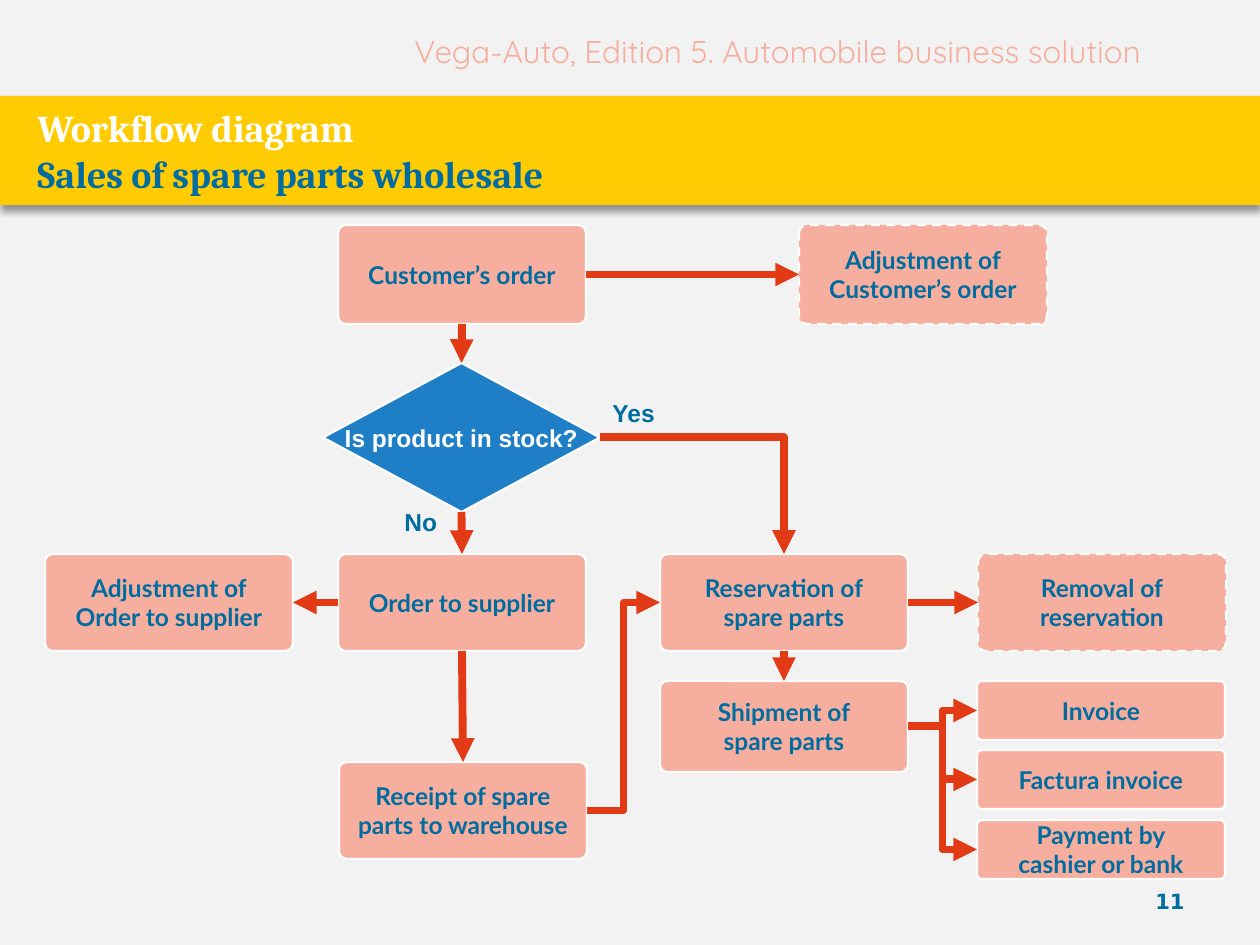
from lxml import etree
from pptx import Presentation
from pptx.dml.color import RGBColor
from pptx.enum.dml import MSO_LINE
from pptx.enum.shapes import MSO_CONNECTOR, MSO_SHAPE
from pptx.enum.text import MSO_ANCHOR, PP_ALIGN
from pptx.oxml import parse_xml
from pptx.oxml.ns import nsdecls, qn
from pptx.util import Pt

PX = 9144000 / 1260
COLORS = {
    "background": "F2F2F2", "band": "FFCC03", "box": "F6AF9F", "decision": "1E7FC6",
    "arrow": "E23A15", "text": "006CA0", "white": "FFFFFF",
}


def emu(*lengths):
    return [round(length * PX) for length in lengths]


def write_text(shape, text, size=14, font="Lato", color="text", bold=True,
               align=PP_ALIGN.LEFT, anchor=MSO_ANCHOR.TOP, wrap=True):
    """Append each line of text as a paragraph."""
    frame = shape.text_frame
    frame.word_wrap = wrap
    frame.vertical_anchor = anchor
    for line in text.split("\n"):
        paragraph = frame.add_paragraph() if frame.text else frame.paragraphs[0]
        paragraph.alignment = align
        run = paragraph.add_run()
        run.text = line
        run.font.size = Pt(size)
        run.font.name = font
        run.font.bold = bold
        run.font.color.rgb = RGBColor.from_string(COLORS[color])


presentation = Presentation()
presentation.slide_width, presentation.slide_height = emu(1260, 945)
slide = presentation.slides.add_slide(presentation.slide_layouts[6])
slide.background.fill.solid()
slide.background.fill.fore_color.rgb = RGBColor.from_string(COLORS["background"])
shapes = slide.shapes

# Title band with its soft shadow
band = shapes.add_shape(MSO_SHAPE.RECTANGLE, *emu(0, 96, 1260, 109))
band.fill.solid()
band.fill.fore_color.rgb = RGBColor.from_string(COLORS["band"])
band.line.fill.background()
band._element.spPr.append(parse_xml(
    f'<a:effectLst {nsdecls("a")}><a:outerShdw blurRad="50800" dist="38100" dir="5400000">'
    '<a:srgbClr val="000000"><a:alpha val="40000"/></a:srgbClr></a:outerShdw></a:effectLst>'))

# Header, title and page number
header = shapes.add_textbox(*emu(402, 26, 820, 51))
write_text(header, "Vega-Auto, Edition 5. Automobile business solution",
           size=18, font="Quicksand", color="box", bold=False)
title = shapes.add_textbox(*emu(25, 97, 1134, 107))
for line, color in (("Workflow diagram", "white"), ("Sales of spare parts wholesale", "text")):
    write_text(title, line, size=21.6, font="Cambria", color=color, anchor=MSO_ANCHOR.MIDDLE)
page_number = shapes.add_textbox(*emu(903, 876, 294, 50))
write_text(page_number, "11", size=12, font="DejaVu Sans",
           align=PP_ALIGN.RIGHT, anchor=MSO_ANCHOR.MIDDLE)

# Steps: name, text, left, top, height, dashed outline
BOX_WIDTH = 248
STEPS = [
    ("order", "Customer’s order", 338, 225, 99, False),
    ("order change", "Adjustment of\nCustomer’s order", 799, 225, 99, True),
    ("supplier change", "Adjustment of\nOrder to supplier", 45, 554, 97, False),
    ("supplier", "Order to supplier", 338, 554, 97, False),
    ("reservation", "Reservation of\nspare parts", 660, 554, 97, False),
    ("removal", "Removal of\nreservation", 978, 554, 97, True),
    ("receipt", "Receipt of spare\nparts to warehouse", 339, 762, 97, False),
    ("shipment", "Shipment of\nspare parts", 660, 681, 91, False),
    ("invoice", "Invoice", 977, 681, 59, False),
    ("factura", "Factura invoice", 977, 750, 59, False),
    ("payment", "Payment by\ncashier or bank", 977, 820, 59, False),
]
nodes = {}
for name, text, left, top, height, dashed in STEPS:
    box = shapes.add_shape(MSO_SHAPE.ROUNDED_RECTANGLE, *emu(left, top, BOX_WIDTH, height))
    box.adjustments[0] = 0.08
    box.fill.solid()
    box.fill.fore_color.rgb = RGBColor.from_string(COLORS["box"])
    if dashed:
        box.line.dash_style = MSO_LINE.DASH
    write_text(box, text, align=PP_ALIGN.CENTER, anchor=MSO_ANCHOR.MIDDLE, wrap=False)
    nodes[name] = box

# Decision
decision = shapes.add_shape(MSO_SHAPE.FLOWCHART_DECISION, *emu(323, 363, 277, 149))
decision.fill.solid()
decision.fill.fore_color.rgb = RGBColor.from_string(COLORS["decision"])
write_text(decision, "Is product in stock?", font="Arial", color="white",
           align=PP_ALIGN.CENTER, anchor=MSO_ANCHOR.MIDDLE, wrap=False)
nodes["decision"] = decision

for node in nodes.values():
    node.shadow.inherit = False
    node.line.color.rgb = RGBColor.from_string(COLORS["white"])
    node.line.width = Pt(1.25)

# Answers
for text, left, top, width in (("No", 392, 501, 69), ("Yes", 600, 392, 79)):
    label = shapes.add_textbox(*emu(left, top, width, 42))
    write_text(label, text, font="Arial")

# Arrows between connection sites
TOP, LEFT, BOTTOM, RIGHT = range(4)
ARROWS = [
    ("order", BOTTOM, "decision", TOP, "line"),
    ("order", RIGHT, "order change", LEFT, "line"),
    ("decision", BOTTOM, "supplier", TOP, "line"),
    ("decision", RIGHT, "reservation", TOP, "bentConnector2"),
    ("supplier", LEFT, "supplier change", RIGHT, "line"),
    ("supplier", BOTTOM, "receipt", TOP, "line"),
    ("receipt", RIGHT, "reservation", LEFT, "bentConnector3"),
    ("reservation", BOTTOM, "shipment", TOP, "line"),
    ("reservation", RIGHT, "removal", LEFT, "line"),
    ("shipment", RIGHT, "invoice", LEFT, "bentConnector3"),
    ("shipment", RIGHT, "factura", LEFT, "bentConnector3"),
    ("shipment", RIGHT, "payment", LEFT, "bentConnector3"),
]
for start, start_site, end, end_site, geometry in ARROWS:
    kind = MSO_CONNECTOR.STRAIGHT if geometry == "line" else MSO_CONNECTOR.ELBOW
    arrow = shapes.add_connector(kind, 0, 0, 0, 0)
    arrow.begin_connect(nodes[start], start_site)
    arrow.end_connect(nodes[end], end_site)
    arrow.line.color.rgb = RGBColor.from_string(COLORS["arrow"])
    arrow.line.width = Pt(4.5)
    properties = arrow._element.spPr
    properties.find(qn("a:prstGeom")).set("prst", geometry)
    etree.SubElement(properties.find(qn("a:ln")), qn("a:tailEnd"), type="triangle")
    etree.SubElement(properties, qn("a:effectLst"))

presentation.save("out.pptx")
